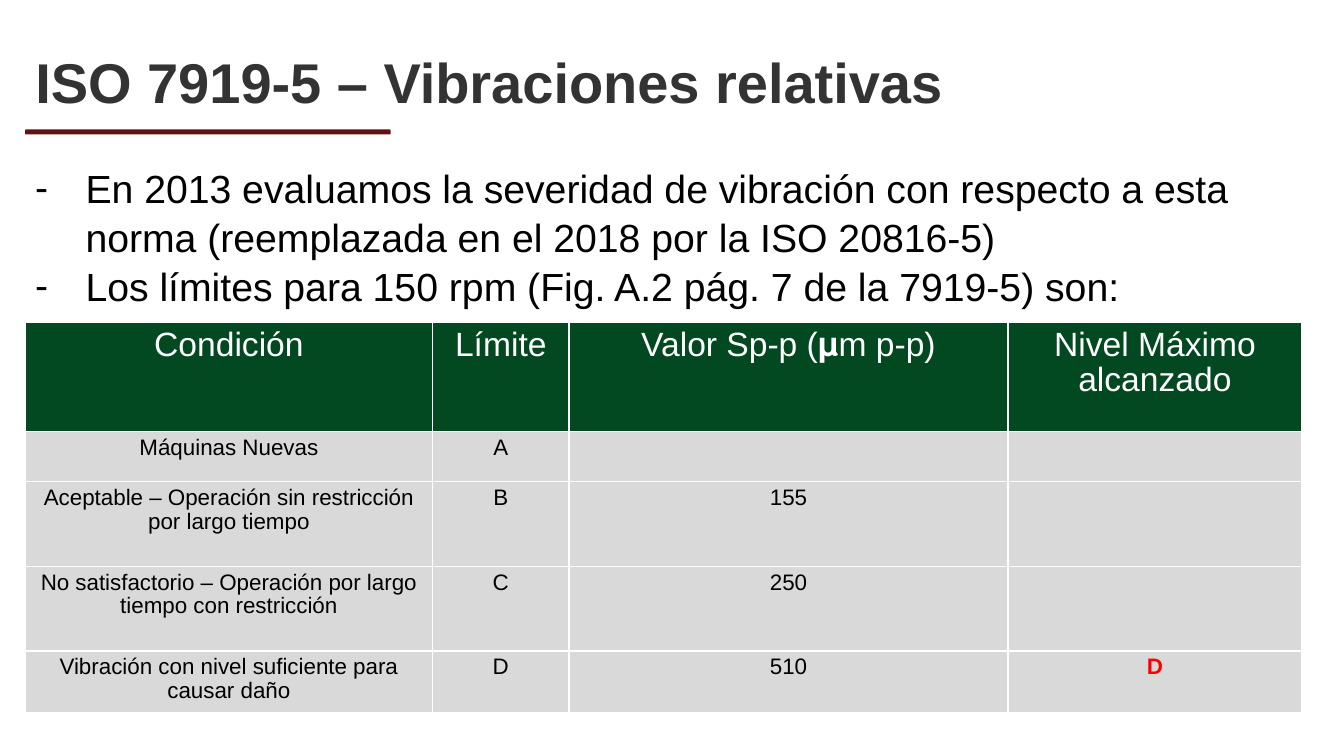
from dataclasses import dataclass
from lxml.etree import SubElement
from pptx import Presentation
from pptx.dml.color import RGBColor as Rgb
from pptx.enum.shapes import MSO_SHAPE as Preset
from pptx.enum.text import MSO_ANCHOR as Anchor, MSO_AUTO_SIZE as AutoSize, PP_ALIGN as Align
from pptx.oxml.ns import qn
from pptx.util import Pt

TITLE = "ISO 7919-5 – Vibraciones relativas"
POINTS = [
    "En 2013 evaluamos la severidad de vibración con respecto a esta norma "
    "(reemplazada en el 2018 por la ISO 20816-5)",
    "Los límites para 150 rpm (Fig. A.2 pág. 7 de la 7919-5) son:",
]
LIMITS = [
    ("Condición", "Límite", "Valor Sp-p (𝛍m p-p)", "Nivel Máximo alcanzado"),
    ("Máquinas Nuevas", "A", "", ""),
    ("Aceptable – Operación sin restricción por largo tiempo", "B", "155", ""),
    ("No satisfactorio – Operación por largo tiempo con restricción", "C", "250", ""),
    ("Vibración con nivel suficiente para causar daño", "D", "510", "D"),
]
COLUMN_WIDTHS = [291, 97.5, 313.5, 210]
ROW_HEIGHTS = [78, 35.5, 60.5, 60.5, 42.2]
LEFT = 18


@dataclass(frozen=True)
class Theme:
    """Colours, font and type sizes of the slide."""
    font: str = "Arial"
    title: str = "333333"
    accent: str = "611112"
    ink: str = "000000"
    header: str = "024921"
    body: str = "D9D9D9"
    white: str = "FFFFFF"
    alert: str = "FF0000"
    title_size: int = 40
    point_size: int = 28
    header_size: int = 24
    cell_size: int = 16


THEME = Theme()


def box(left, top, width, height):
    """Turn a box in points into lengths."""
    return Pt(left), Pt(top), Pt(width), Pt(height)


def add_text(paragraph, text, size, colour, bold=False):
    """Add one styled run."""
    run = paragraph.add_run()
    run.text = text
    run.font.name, run.font.size, run.font.bold = THEME.font, Pt(size), bold
    run.font.color.rgb = Rgb.from_string(colour)


def paint(part, colour):
    """Give a shape or cell a solid fill."""
    part.fill.solid()
    part.fill.fore_color.rgb = Rgb.from_string(colour)


def add_borders(cell):
    """Draw white lines on the four sides, ahead of the fill."""
    properties = cell._tc.get_or_add_tcPr()
    for position, side in enumerate(("lnL", "lnR", "lnT", "lnB")):
        line = SubElement(properties, qn(f"a:{side}"), w=str(Pt(1)))
        fill = SubElement(line, qn("a:solidFill"))
        SubElement(fill, qn("a:srgbClr"), val=THEME.white)
        properties.insert(position, line)


def add_heading(slide):
    """Place the title and its rule."""
    title = slide.shapes.title
    title.left, title.top, title.width, title.height = box(LEFT, 18, 768, 68)
    frame = title.text_frame
    frame.auto_size, frame.vertical_anchor = AutoSize.NONE, Anchor.BOTTOM
    heading = frame.paragraphs[0]
    heading.alignment, heading.line_spacing = Align.LEFT, 0.9
    add_text(heading, TITLE, THEME.title_size, THEME.title, True)
    rule = slide.shapes.add_shape(Preset.ROUNDED_RECTANGLE, *box(LEFT, 92.5, 261, 3.5))
    rule.shadow.inherit = False
    paint(rule, THEME.accent)
    rule.line.fill.background()


def add_points(slide):
    """Place the dashed list."""
    frame = slide.shapes.add_textbox(*box(LEFT, 112.5, 924, 112)).text_frame
    frame.word_wrap = True
    for number, text in enumerate(POINTS):
        point = frame.add_paragraph() if number else frame.paragraphs[0]
        properties = point._p.get_or_add_pPr()
        properties.set("marL", str(Pt(36)))
        properties.set("indent", str(Pt(-36)))
        SubElement(properties, qn("a:buFont"), typeface=THEME.font)
        SubElement(properties, qn("a:buChar"), char="-")
        point.line_spacing = 1.04
        add_text(point, text, THEME.point_size, THEME.ink)


def add_limits(slide):
    """Place the table of limits."""
    area = box(LEFT, 230.5, sum(COLUMN_WIDTHS), sum(ROW_HEIGHTS))
    table = slide.shapes.add_table(len(LIMITS), len(COLUMN_WIDTHS), *area).table
    for column, width in zip(table.columns, COLUMN_WIDTHS):
        column.width = Pt(width)
    for row, height in zip(table.rows, ROW_HEIGHTS):
        row.height = Pt(height)
    for row, values in enumerate(LIMITS):
        for column, value in enumerate(values):
            cell = table.cell(row, column)
            paint(cell, THEME.body if row else THEME.header)
            add_borders(cell)
            if not value:
                continue
            entry = cell.text_frame.paragraphs[0]
            entry.alignment, entry.line_spacing = Align.CENTER, 0.95
            reached = row > 0 and column == len(values) - 1
            size = THEME.cell_size if row else THEME.header_size
            colour = THEME.alert if reached else THEME.ink if row else THEME.white
            add_text(entry, value, size, colour, reached)


def main():
    """Build and save the slide."""
    deck = Presentation()
    deck.slide_width, deck.slide_height = Pt(960), Pt(540)
    slide = deck.slides.add_slide(deck.slide_layouts[5])
    add_heading(slide)
    add_points(slide)
    add_limits(slide)
    deck.save("out.pptx")


if __name__ == "__main__":
    main()
